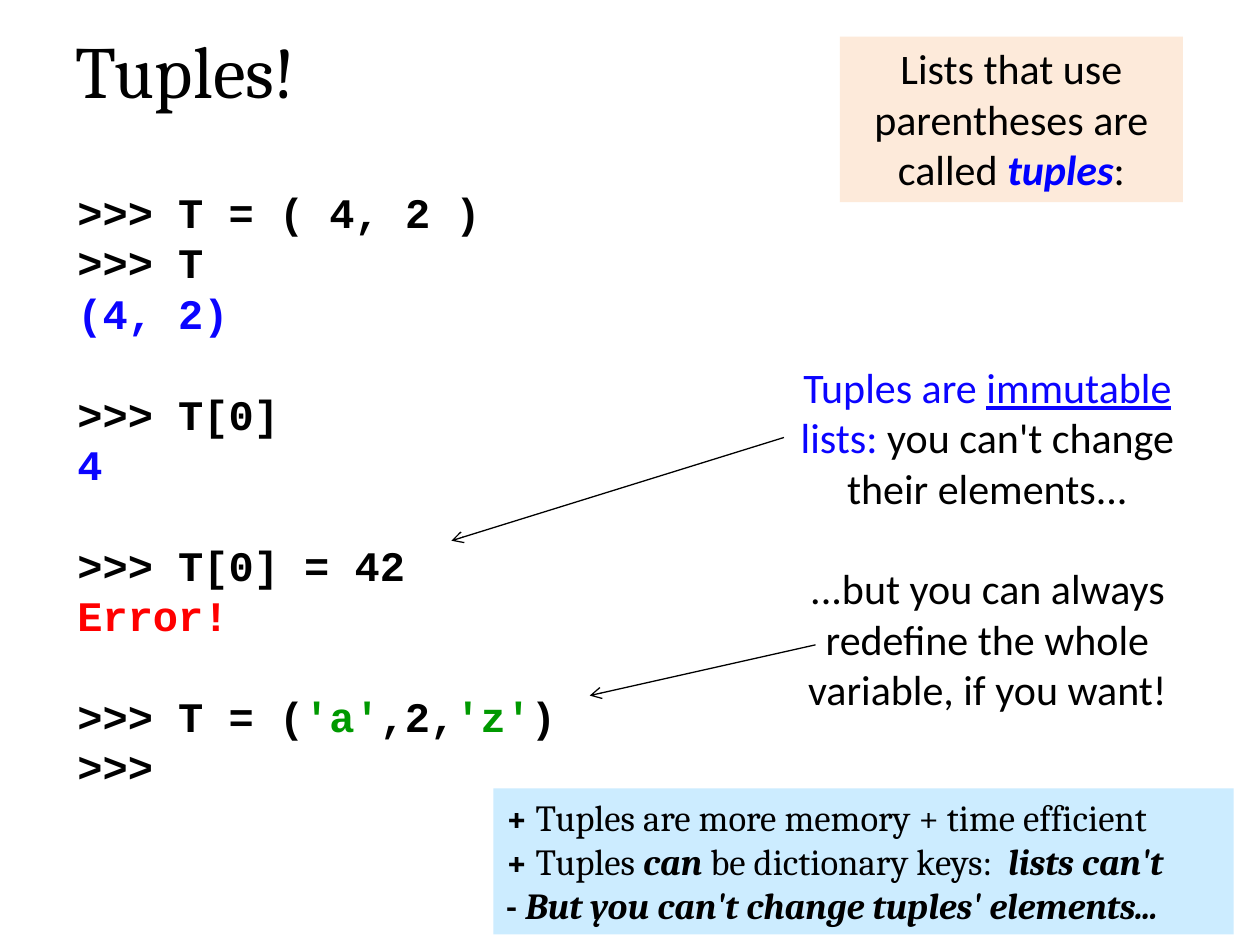
from lxml.etree import SubElement
from pptx import Presentation
from pptx.dml.color import RGBColor
from pptx.enum.shapes import MSO_CONNECTOR, MSO_SHAPE
from pptx.enum.text import MSO_ANCHOR, MSO_AUTO_SIZE, PP_ALIGN
from pptx.oxml.ns import qn
from pptx.util import Pt

BLACK, RED, GREEN = "000000", "FF0000", "009900"
BLUE, TERM_BLUE = "0B04FF", "0000FF"
LINE_HEIGHT = 1.2  # times the font size

# Content: blocks of paragraphs, a paragraph is a list of (text, colour, flags)
TITLE = "Tuples!"
SESSION = [
    [[(">>> T = ( 4, 2 )", BLACK, "")], [(">>> T", BLACK, "")], [("(4, 2)", BLUE, "")]],
    [[(">>> T[0]", BLACK, "")], [("4", BLUE, "")]],
    [[(">>> T[0] = 42", BLACK, "")], [("Error!", RED, "")]],
    [[(">>> T = (", BLACK, ""), ("'a'", GREEN, ""), (",2,", BLACK, ""),
      ("'z'", GREEN, ""), (")", BLACK, "")],
     [(">>>", BLACK, "")]],
]
DEFINITION = [[[("Lists that use parentheses are called ", BLACK, ""),
                ("tuples", TERM_BLUE, "bi"), (":", BLACK, "")]]]
REMARKS = [
    [[("Tuples are ", BLUE, ""), ("immutable", BLUE, "u"), (" lists: ", BLUE, ""),
      ("you can't change their elements...", BLACK, "")]],
    [[("...but you can always redefine the whole variable, if you want!", BLACK, "")]],
]
TRADEOFFS = [[
    [("+", BLACK, "b"), (" Tuples are more memory + time efficient", BLACK, "")],
    [("+", BLACK, "b"), (" Tuples ", BLACK, ""), ("can", BLACK, "bi"),
     (" be dictionary keys:  ", BLACK, ""), ("lists can't", BLACK, "bi")],
    [("- ", BLACK, "b"), ("But you can't change tuples' elements...", BLACK, "bi")],
]]
ARROWS = [((466, 368.5), (337, 397.5)), ((448, 250), (258, 309))]


def rgb(colour):
    return RGBColor.from_string(colour)


def place(shape, left, top, width, height):
    shape.left, shape.top = Pt(left), Pt(top)
    shape.width, shape.height = Pt(width), Pt(height)


def write(frame, blocks, font, size, align=PP_ALIGN.LEFT, bold=None, wrap=True):
    """Fill a frame; successive blocks are one line apart."""
    frame.word_wrap = wrap
    frame.auto_size = MSO_AUTO_SIZE.NONE
    frame.vertical_anchor = MSO_ANCHOR.TOP
    paragraph = None
    for number, block in enumerate(blocks):
        for row, runs in enumerate(block):
            paragraph = frame.add_paragraph() if paragraph else frame.paragraphs[0]
            paragraph.alignment = align
            paragraph.line_spacing = Pt(size * LINE_HEIGHT)
            paragraph.space_before = Pt(size * LINE_HEIGHT if number and not row else 0)
            paragraph.font.name, paragraph.font.size = font, Pt(size)
            paragraph.font.bold = bold
            for text, colour, flags in runs:
                run = paragraph.add_run()
                run.text = text
                run.font.color.rgb = rgb(colour)
                # A run without a flag keeps the paragraph's setting
                run.font.bold = "b" in flags or bold
                run.font.italic = "i" in flags or None
                run.font.underline = "u" in flags or None


def add_panel(slide, box, fill):
    panel = slide.shapes.add_shape(MSO_SHAPE.RECTANGLE, *map(Pt, box))
    panel.shadow.inherit = False
    panel.fill.solid()
    panel.fill.fore_color.rgb = rgb(fill)
    panel.line.fill.background()
    return panel.text_frame


def add_arrow(slide, start, end):
    arrow = slide.shapes.add_connector(MSO_CONNECTOR.STRAIGHT, *map(Pt, start + end))
    arrow.line.color.rgb = rgb(BLACK)
    arrow.line.width = Pt(0.75)
    SubElement(arrow.line._get_or_add_ln(), qn("a:tailEnd"), type="arrow")
    SubElement(arrow._element.spPr, qn("a:effectLst"))


def main():
    deck = Presentation()
    deck.slide_width, deck.slide_height = Pt(720), Pt(540)
    slide = deck.slides.add_slide(deck.slide_layouts[1])
    title, session = slide.placeholders

    # Title
    place(title, 36, 10, 354, 58.5)
    title.text_frame.text = TITLE
    title.text_frame.auto_size = MSO_AUTO_SIZE.NONE
    title.text_frame.vertical_anchor = MSO_ANCHOR.MIDDLE
    heading = title.text_frame.paragraphs[0]
    heading.alignment = PP_ALIGN.LEFT
    heading.font.name, heading.font.size = "Cambria", Pt(42)
    heading.font.color.rgb = rgb(BLACK)

    # Coloured panels
    write(add_panel(slide, (480, 21, 196, 94.5), "FDEADA"),
          DEFINITION, "Calibri", 24, PP_ALIGN.CENTER)
    write(add_panel(slide, (282, 450.5, 423, 83.5), "CCECFF"),
          TRADEOFFS, "Cambria", 21)

    # Interpreter session, without bullets
    place(session, 37, 103, 291, 356)
    write(session.text_frame, SESSION, "Courier New", 24, bold=True, wrap=False)
    for paragraph in session.text_frame.paragraphs:
        properties = paragraph._p.get_or_add_pPr()
        properties.set("marL", "0")
        properties.set("indent", "0")
        SubElement(properties, qn("a:buNone"))
        # Default run properties must follow the bullet setting
        properties.append(properties.find(qn("a:defRPr")))

    # Remarks and their arrows
    remarks = slide.shapes.add_textbox(Pt(439), Pt(203), Pt(250.5), Pt(211))
    write(remarks.text_frame, REMARKS, "Calibri", 24, PP_ALIGN.CENTER)
    for start, end in ARROWS:
        add_arrow(slide, start, end)

    deck.save("out.pptx")


if __name__ == "__main__":
    main()
